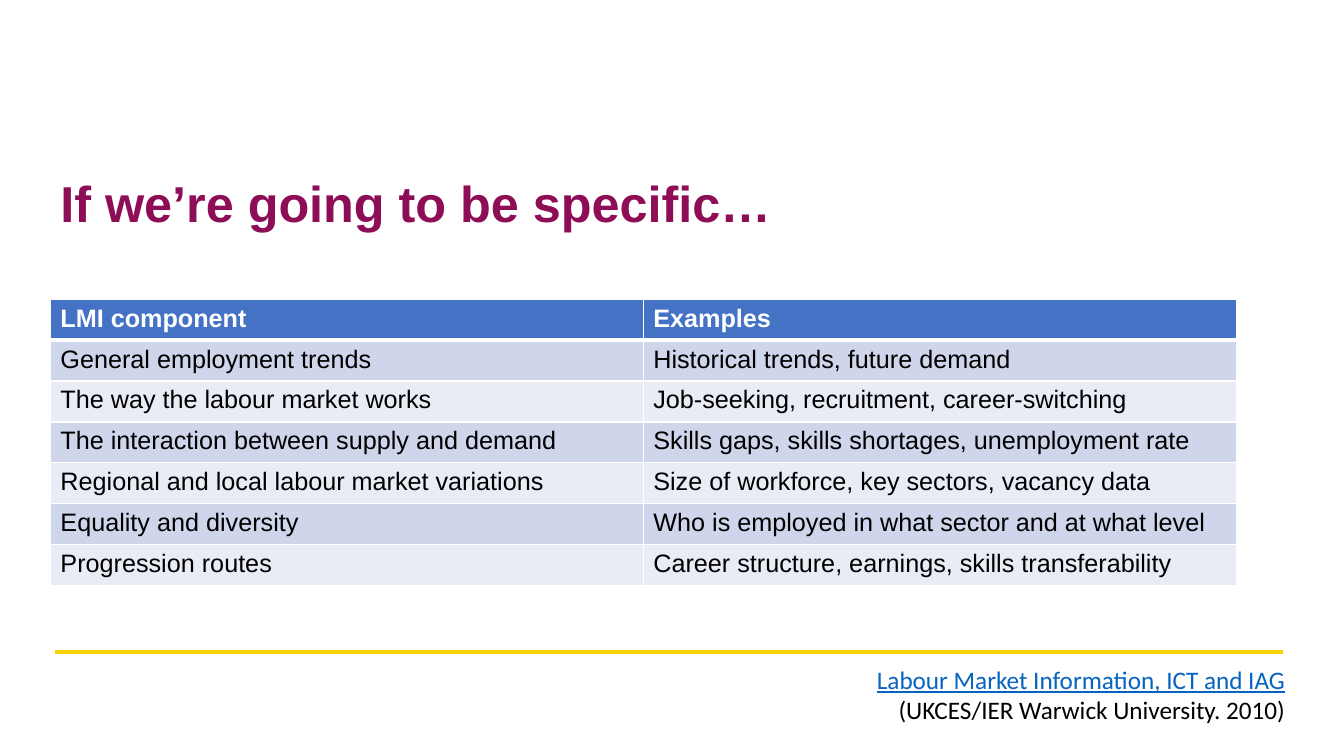
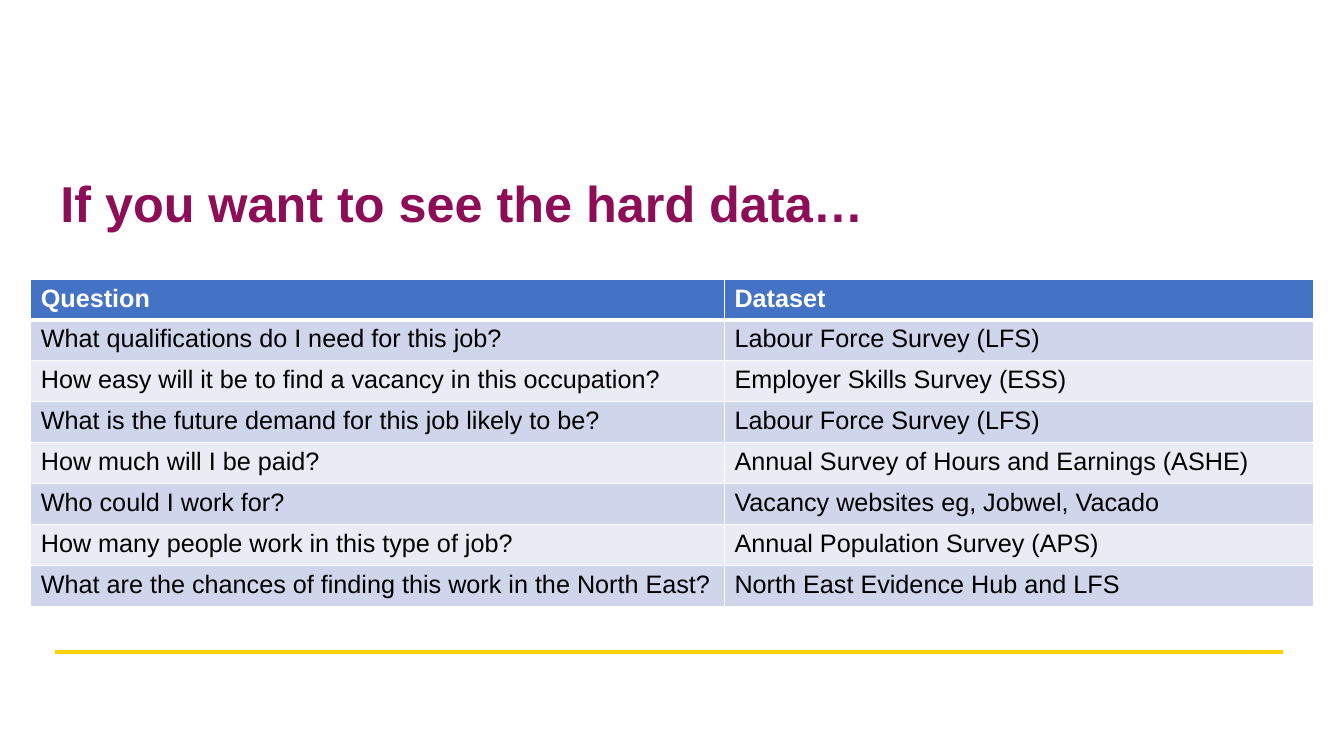
from lxml import etree
from pptx import Presentation
from pptx.dml.color import RGBColor
from pptx.enum import shapes, text
from pptx.oxml import ns
from pptx.util import Pt

PLUM = "8D0E57"
YELLOW = "FBD201"
BLUE = "4472C4"
BANDS = ("CFD5EA", "E9EBF5")
WHITE = "FFFFFF"
BLACK = "000000"
LINK_BLUE = "0563C1"

ROW_HEIGHT = 29.2

COMPONENTS = [
    ("LMI component", "Examples"),
    ("General employment trends", "Historical trends, future demand"),
    ("The way the labour market works", "Job-seeking, recruitment, career-switching"),
    ("The interaction between supply and demand", "Skills gaps, skills shortages, unemployment rate"),
    ("Regional and local labour market variations", "Size of workforce, key sectors, vacancy data"),
    ("Equality and diversity", "Who is employed in what sector and at what level"),
    ("Progression routes", "Career structure, earnings, skills transferability"),
]

DATASETS = [
    ("Question", "Dataset"),
    ("What qualifications do I need for this job?", "Labour Force Survey (LFS)"),
    ("How easy will it be to find a vacancy in this occupation?", "Employer Skills Survey (ESS)"),
    ("What is the future demand for this job likely to be?", "Labour Force Survey (LFS)"),
    ("How much will I be paid?", "Annual Survey of Hours and Earnings (ASHE)"),
    ("Who could I work for?", "Vacancy websites eg, Jobwel, Vacado"),
    ("How many people work in this type of job?", "Annual Population Survey (APS)"),
    ("What are the chances of finding this work in the North East?", "North East Evidence Hub and LFS"),
]


def colour(value):
    return RGBColor.from_string(value)


def write(para, words, size=18, font="Arial", color=BLACK, bold=False,
          underline=False, align=text.PP_ALIGN.LEFT, line_spacing=None):
    para.alignment = align
    para.line_spacing = line_spacing
    span = para.add_run()
    span.text = words
    span.font.size = Pt(size)
    span.font.name = font
    span.font.color.rgb = colour(color)
    span.font.bold = bold
    span.font.underline = underline


def add_box(page, left, top, width, height, anchor=text.MSO_ANCHOR.TOP):
    box = page.shapes.add_textbox(Pt(left), Pt(top), Pt(width), Pt(height))
    box.text_frame.word_wrap = True
    box.text_frame.vertical_anchor = anchor
    return box.text_frame


def add_rule(page):
    rule = page.shapes.add_connector(
        shapes.MSO_CONNECTOR.STRAIGHT, Pt(39.6), Pt(465.8), Pt(916.6), Pt(465.8))
    rule.line.color.rgb = colour(YELLOW)
    rule.line.width = Pt(3)
    etree.SubElement(rule.element.spPr, ns.qn("a:effectLst"))


def set_border(cell, side, width):
    properties = cell._tc.get_or_add_tcPr()
    line = etree.SubElement(properties, ns.qn(f"a:ln{side}"), w=str(Pt(width)))
    fill = etree.SubElement(line, ns.qn("a:solidFill"))
    etree.SubElement(fill, ns.qn("a:srgbClr"), val=WHITE)


def add_table(page, rows, left, top, widths):
    frame = page.shapes.add_table(
        len(rows), len(widths), Pt(left), Pt(top),
        Pt(sum(widths)), Pt(ROW_HEIGHT * len(rows)))
    table = frame.table
    for column, width in zip(table.columns, widths):
        column.width = Pt(width)
    for index, values in enumerate(rows):
        table.rows[index].height = Pt(ROW_HEIGHT)
        header = index == 0
        borders = {"L": 1, "R": 1, "T": 3 if index == 1 else 1, "B": 3 if header else 1}
        for cell, words in zip(table.rows[index].cells, values):
            for side, width in borders.items():
                set_border(cell, side, width)
            cell.fill.solid()
            cell.fill.fore_color.rgb = colour(BLUE if header else BANDS[(index - 1) % 2])
            write(cell.text_frame.paragraphs[0], words,
                  color=WHITE if header else BLACK, bold=header)


def add_source(page, title, citation):
    frame = add_box(page, 298.8, 470.9, 626.4, 50.9)
    right = text.PP_ALIGN.RIGHT
    write(frame.paragraphs[0], title, font="Calibri", color=LINK_BLUE,
          underline=True, align=right)
    write(frame.add_paragraph(), citation, font="Calibri", align=right)


def add_page(deck, title):
    page = deck.slides.add_slide(deck.slide_layouts[6])
    frame = add_box(page, 36, 95, 858.2, 104.4, text.MSO_ANCHOR.MIDDLE)
    write(frame.paragraphs[0], title, size=36, color=PLUM, bold=True, line_spacing=0.9)
    add_rule(page)
    return page


def main():
    deck = Presentation()
    deck.slide_width = Pt(960)
    deck.slide_height = Pt(540)

    page = add_page(deck, "If we’re going to be specific…")
    add_table(page, COMPONENTS, 36, 213.8, (423.5, 423.5))
    add_source(page, "Labour Market Information, ICT and IAG",
               "(UKCES/IER Warwick University. 2010)")

    page = add_page(deck, "If you want to see the hard data…")
    add_table(page, DATASETS, 22, 199.4, (495.5, 420.5))

    deck.save("out.pptx")


if __name__ == "__main__":
    main()
